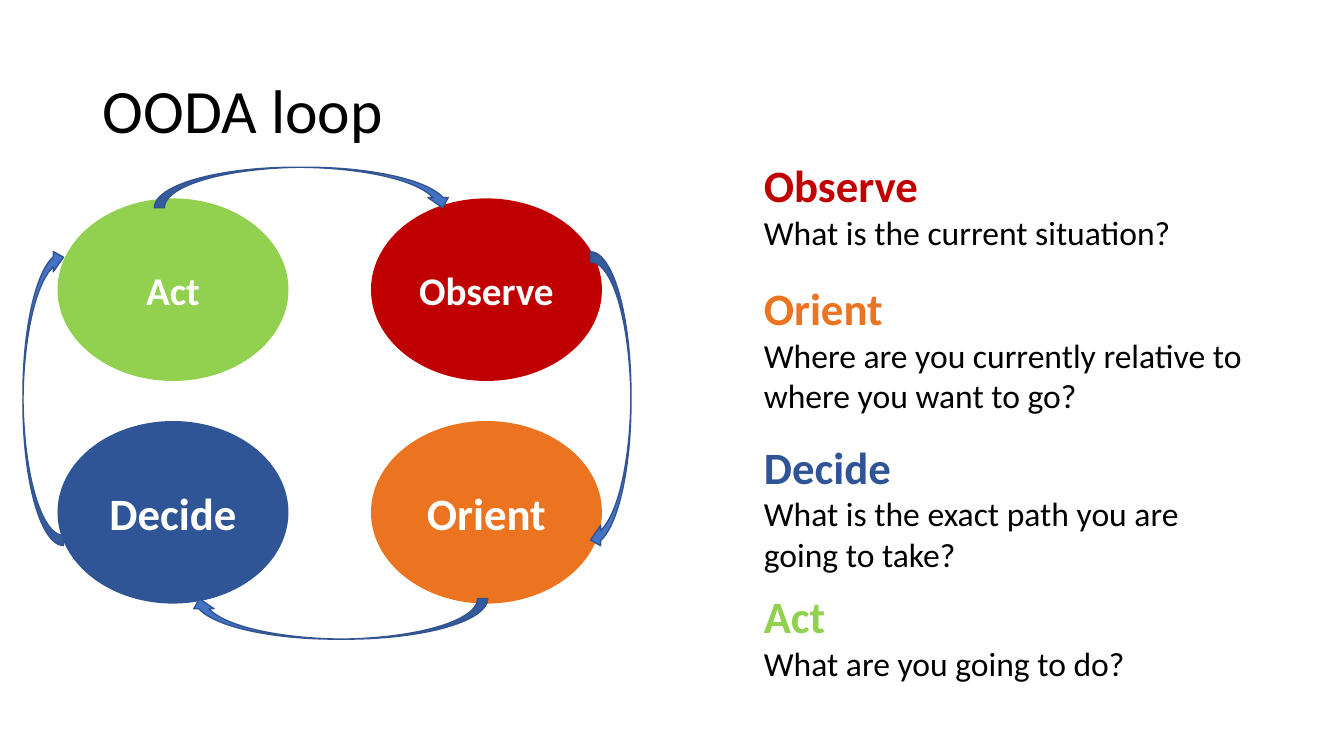
from dataclasses import dataclass

from pptx import Presentation
from pptx.dml.color import RGBColor
from pptx.enum.shapes import MSO_SHAPE
from pptx.enum.text import MSO_ANCHOR, MSO_AUTO_SIZE, PP_ALIGN
from pptx.util import Cm, Pt


@dataclass(frozen=True)
class Theme:
    font: str = "Calibri"
    text: str = "000000"
    on_fill: str = "FFFFFF"
    observe: str = "C00000"
    orient: str = "EC7320"
    decide: str = "2F5597"
    act: str = "92D050"
    arrow: str = "4472C4"
    arrow_edge: str = "325491"
    title_size: int = 44
    heading_size: int = 32
    small_label_size: int = 28
    question_size: int = 24


THEME = Theme()

# Stage, colour, label size, (column, row) in the loop
STAGES = [
    ("Act", THEME.act, THEME.small_label_size, (0, 0)),
    ("Observe", THEME.observe, THEME.small_label_size, (1, 0)),
    ("Orient", THEME.orient, THEME.heading_size, (1, 1)),
    ("Decide", THEME.decide, THEME.heading_size, (0, 1)),
]

# Stage, colour, question, top within the column, height (cm)
QUESTIONS = [
    ("Observe", THEME.observe, "What is the current situation?", 0, 2.74),
    ("Orient", THEME.orient,
     "Where are you currently relative to where you want to go?", 3.1, 3.68),
    ("Decide", THEME.decide,
     "What is the exact path you are going to take?", 7.09, 3.68),
    ("Act", THEME.act, "What are you going to do?", 10.85, 2.64),
]

# Rotation and centre offset from the middle of the loop (cm)
ARROWS = [
    (0, -0.66, -5.38),
    (90, 7.08, 0),
    (270, -7.22, -0.12),
    (180, 0.22, 5.49),
]


def style(paragraph, size, color, bold=False):
    font = paragraph.font
    font.name, font.size, font.bold = THEME.font, Pt(size), bold
    font.color.rgb = RGBColor.from_string(color)


def add_filled(slide, kind, left, top, width, height, color):
    shape = slide.shapes.add_shape(kind, Cm(left), Cm(top), Cm(width), Cm(height))
    shape.shadow.inherit = False
    shape.fill.solid()
    shape.fill.fore_color.rgb = RGBColor.from_string(color)
    return shape


def place_title(slide, left, top, width, height):
    title = slide.shapes.title
    title.left, title.top = Cm(left), Cm(top)
    title.width, title.height = Cm(width), Cm(height)
    frame = title.text_frame
    frame.text = "OODA loop"
    frame.auto_size = MSO_AUTO_SIZE.NONE
    frame.vertical_anchor = MSO_ANCHOR.MIDDLE
    heading = frame.paragraphs[0]
    heading.alignment = PP_ALIGN.LEFT
    heading.line_spacing = 0.9
    style(heading, THEME.title_size, THEME.text)


def add_stages(slide, left, top, width, height):
    oval_width, oval_height = 5.82, 4.6
    for stage, color, size, (column, row) in STAGES:
        oval = add_filled(slide, MSO_SHAPE.OVAL,
                          left + column * (width - oval_width),
                          top + row * (height - oval_height),
                          oval_width, oval_height, color)
        oval.line.fill.background()
        frame = oval.text_frame
        frame.text = stage
        frame.vertical_anchor = MSO_ANCHOR.MIDDLE
        label = frame.paragraphs[0]
        label.alignment = PP_ALIGN.CENTER
        style(label, size, THEME.on_fill, bold=True)


def add_arrows(slide, left, top, width, height):
    length, depth = 7.52, 1.02
    for rotation, dx, dy in ARROWS:
        arrow = add_filled(slide, MSO_SHAPE.CURVED_DOWN_ARROW,
                           left + (width - length) / 2 + dx,
                           top + (height - depth) / 2 + dy,
                           length, depth, THEME.arrow)
        arrow.rotation = rotation
        arrow.line.color.rgb = RGBColor.from_string(THEME.arrow_edge)
        arrow.line.width = Pt(1)


def add_questions(slide, left, top, width):
    for stage, color, question, offset, height in QUESTIONS:
        entry = slide.shapes.add_textbox(Cm(left), Cm(top + offset),
                                         Cm(width), Cm(height))
        frame = entry.text_frame
        frame.word_wrap = True
        frame.auto_size = MSO_AUTO_SIZE.SHAPE_TO_FIT_TEXT
        frame.text = f"{stage}\n{question}"
        heading, body = frame.paragraphs
        style(heading, THEME.heading_size, color, bold=True)
        style(body, THEME.question_size, THEME.text)


def main():
    deck = Presentation()
    deck.slide_width, deck.slide_height = Cm(33.87), Cm(19.05)
    slide = deck.slides.add_slide(deck.slide_layouts.get_by_name("Title Only"))
    loop_box = (1.45, 5, 13.72, 10.21)

    # Title
    place_title(slide, 2.34, 1.02, 29.21, 3.68)
    # Loop of four stages
    add_stages(slide, *loop_box)
    # Question for each stage
    add_questions(slide, 19, 3.86, 13)
    # Arrows around the loop
    add_arrows(slide, *loop_box)

    deck.save("out.pptx")


if __name__ == "__main__":
    main()
